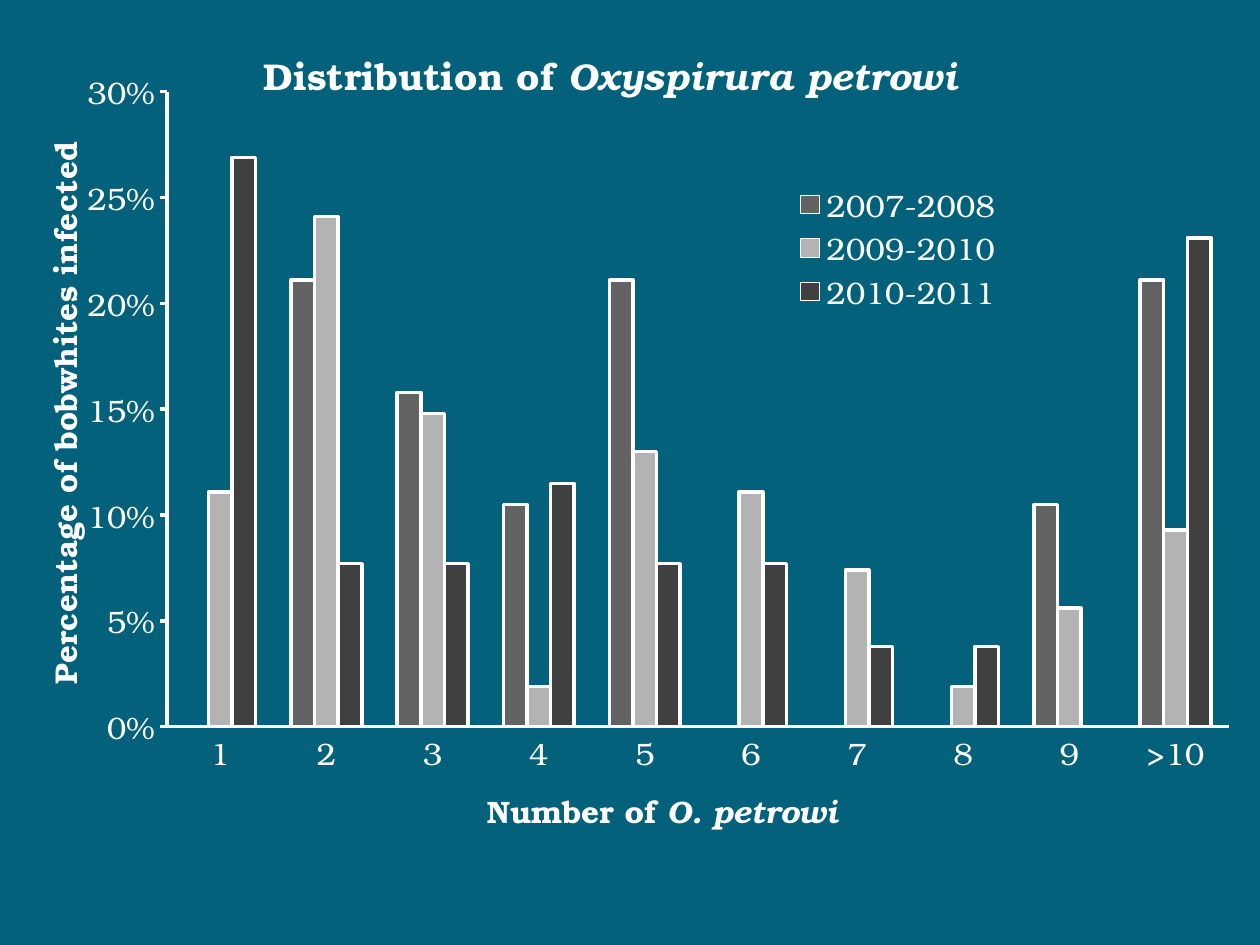
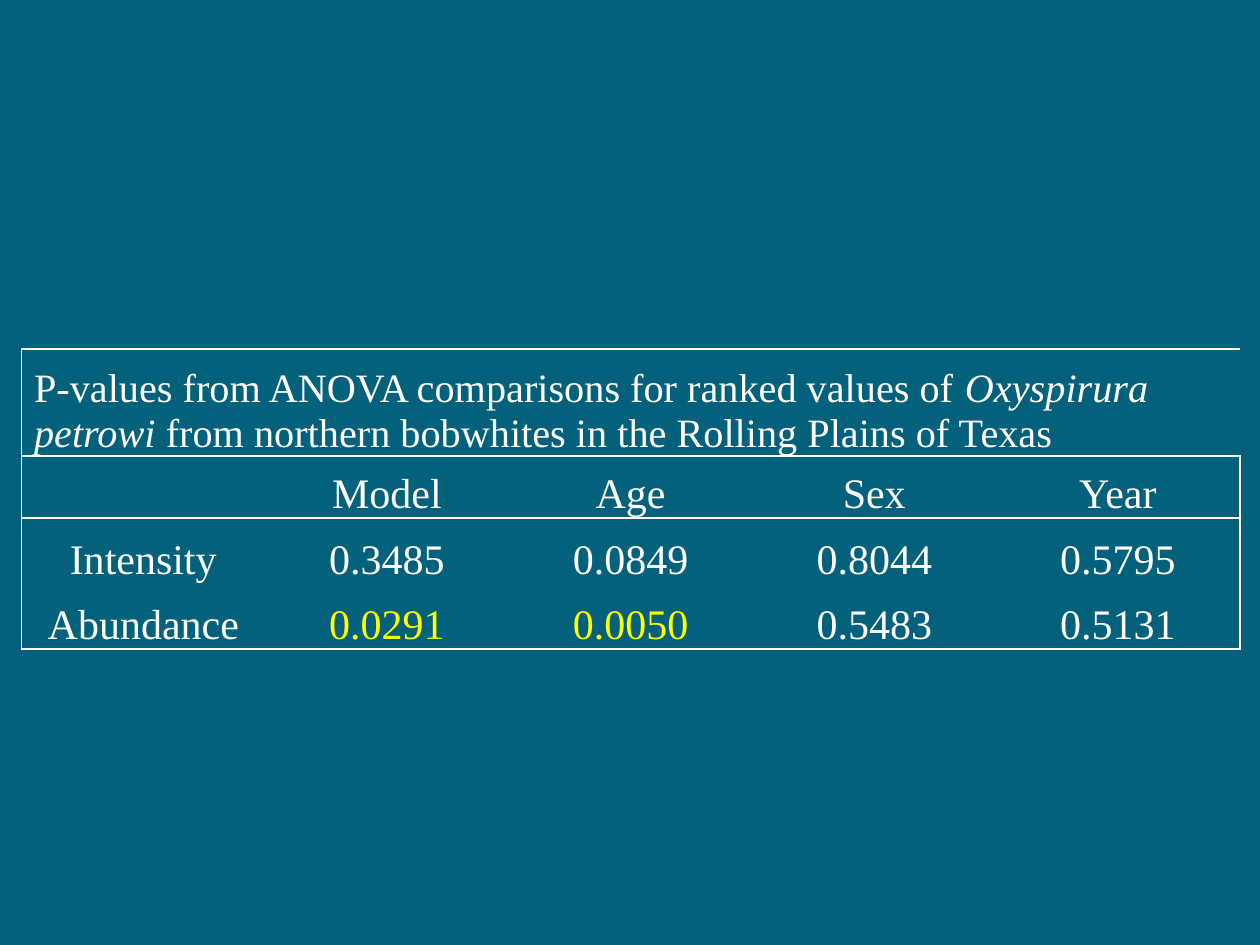
from lxml import etree
from pptx import Presentation
from pptx.chart.data import CategoryChartData
from pptx.dml.color import RGBColor as RGB
from pptx.enum.chart import XL_CHART_TYPE as CHART, XL_LEGEND_POSITION as LEGEND, XL_TICK_MARK as TICK
from pptx.enum.text import MSO_ANCHOR as ANCHOR, PP_ALIGN as ALIGN
from pptx.oxml import parse_xml
from pptx.oxml.ns import nsdecls, qn
from pptx.util import Inches, Pt

COLORS = {"background": "04617B", "text": "FFFFFF", "significant": "FFFF00",
          "2007-2008": "636363", "2009-2010": "B3B3B3", "2010-2011": "404040"}
COLORS = {name: RGB.from_string(value) for name, value in COLORS.items()}
CHART_FONT, TABLE_FONT = "TeX Gyre Bonum", "Times New Roman"


def add_runs(p, parts, name, size, bold):
    """Add (text, italic) parts to a paragraph as white runs."""
    for text, italic in parts:
        r = p.add_run()
        r.text = text
        r.font.name, r.font.size = name, Pt(size)
        r.font.bold, r.font.italic = bold, italic
        r.font.color.rgb = COLORS["text"]


def place(element, index, **sizes):
    """Give a chart part a manual layout, in fractions of the chart."""
    for old in element.findall(qn("c:layout")):
        element.remove(old)
    layout = parse_xml(f"<c:layout {nsdecls('c')}><c:manualLayout/></c:layout>")
    modes = {"xMode": "edge", "yMode": "edge"}
    if index == 0:
        modes = {"layoutTarget": "inner", **modes}
    for tag, value in {**modes, **sizes}.items():
        etree.SubElement(layout[0], qn(f"c:{tag}")).set("val", str(value))
    element.insert(index, layout)


prs = Presentation()
prs.slide_width, prs.slide_height = Inches(10), Inches(7.5)
fill = prs.slide_master.background.fill
fill.solid()
fill.fore_color.rgb = COLORS["background"]
blank = prs.slide_layouts[6]

# Slide 1: distribution chart
s = prs.slides.add_slide(blank)
data = CategoryChartData(number_format="0%")
data.categories = [str(n) for n in range(1, 10)] + [">10"]
infected = {
    "2007-2008": [0, 0.211, 0.158, 0.105, 0.211, 0, 0, 0, 0.105, 0.211],
    "2009-2010": [0.111, 0.241, 0.148, 0.019, 0.13, 0.111, 0.074, 0.019, 0.056, 0.093],
    "2010-2011": [0.269, 0.077, 0.077, 0.115, 0.077, 0.077, 0.038, 0.038, 0, 0.231],
}
for season, values in infected.items():
    data.add_series(season, values)
chart = s.shapes.add_chart(CHART.COLUMN_CLUSTERED, 0, 0, Inches(9.83), Inches(6.67), data).chart
chart.font.name, chart.font.size = CHART_FONT, Pt(18)
chart.font.color.rgb = COLORS["text"]

plot = chart.plots[0]
plot.gap_width, plot.overlap, plot.vary_by_categories = 150, 0, False
for series in plot.series:
    series.format.fill.solid()
    series.format.fill.fore_color.rgb = COLORS[series.name]
    series.format.line.color.rgb = COLORS["text"]
    series.format.line.width = Pt(2)

cat_axis, val_axis = chart.category_axis, chart.value_axis
for axis, tick in ((cat_axis, TICK.NONE), (val_axis, TICK.OUTSIDE)):
    axis.major_tick_mark, axis.minor_tick_mark = tick, TICK.NONE
    axis.has_major_gridlines = False
    axis.format.line.color.rgb = COLORS["text"]
    axis.format.line.width = Pt(2)
val_axis.minimum_scale, val_axis.maximum_scale, val_axis.major_unit = 0, 0.3, 0.05
val_axis.tick_labels.number_format = "0%"
val_axis.tick_labels.number_format_is_linked = False

chart.has_title = True
titles = [
    (chart.chart_title, [("Distribution of ", False), ("Oxyspirura petrowi", True)], 21.6, 0.21, 0.05),
    (cat_axis.axis_title, [("Number of ", False), ("O. petrowi", True)], 18, 0.39, 0.945),
    (val_axis.axis_title, [("Percentage of bobwhites infected", False)], 18, 0.025, 0.175),
]
for title, parts, size, x, y in titles:
    add_runs(title.text_frame.paragraphs[0], parts, CHART_FONT, size, True)
    place(title._element, 1, x=x, y=y)
val_axis.axis_title.text_frame._txBody.bodyPr.set("rot", "-5400000")

chart.has_legend = True
chart.legend.position = LEGEND.RIGHT
chart.legend.include_in_layout = False
place(chart.legend._element, 1, x=0.64, y=0.22, w=0.17, h=0.16)
place(chart._chartSpace.chart.plotArea, 0, x=0.135, y=0.111, w=0.857, h=0.768)

# Slide 2: table of p-values
s = prs.slides.add_slide(blank)
rows = [
    ["", "Model", "Age", "Sex", "Year"],
    ["Intensity", "0.3485", "0.0849", "0.8044", "0.5795"],
    ["Abundance", "0.0291", "0.0050", "0.5483", "0.5131"],
]
heights = [0.85, 0.49, 0.52, 0.52]
last_row, last_col = len(rows), len(rows[0]) - 1
table = s.shapes.add_table(last_row + 1, last_col + 1, Inches(0.17), Inches(2.77),
                           Inches(9.67), Inches(sum(heights))).table
table.first_row = table.horz_banding = False
table._tbl.tblPr.find(qn("a:tableStyleId")).text = "{2D5ABB26-0587-4C30-8999-92F81FD0307C}"
for row, height in zip(table.rows, heights):
    row.height = Inches(height)

caption = table.cell(0, 0)
caption.merge(table.cell(0, last_col))
add_runs(caption.text_frame.paragraphs[0],
         [("P-values from ANOVA comparisons for ranked values of ", False), ("Oxyspirura petrowi ", True),
          ("from northern bobwhites in the Rolling Plains of Texas", False)], TABLE_FONT, 23, False)

for i in range(last_row + 1):
    for j in range(last_col + 1):
        cell = table.cell(i, j)
        cell.vertical_anchor = ANCHOR.BOTTOM
        cell.margin_left = Inches(0.01 if i else 0.1)
        cell.margin_right = cell.margin_top = Inches(0.01)
        cell.margin_bottom = 0
        edges = {"L": j == 0, "R": j == last_col, "T": i <= 1, "B": i in (0, last_row)}
        for side, drawn in edges.items():
            if drawn:
                cell._tc.get_or_add_tcPr().append(parse_xml(
                    f'<a:ln{side} {nsdecls("a")} w="{Pt(1)}"><a:solidFill>'
                    f'<a:srgbClr val="{COLORS["text"]}"/></a:solidFill></a:ln{side}>'))
        cell.fill.background()
        if i and rows[i - 1][j]:
            text = rows[i - 1][j]
            p = cell.text_frame.paragraphs[0]
            p.alignment = ALIGN.CENTER
            add_runs(p, [(text, False)], TABLE_FONT, 24, False)
            if text[0] == "0" and float(text) < 0.05:
                p.runs[0].font.color.rgb = COLORS["significant"]

prs.save("out.pptx")
